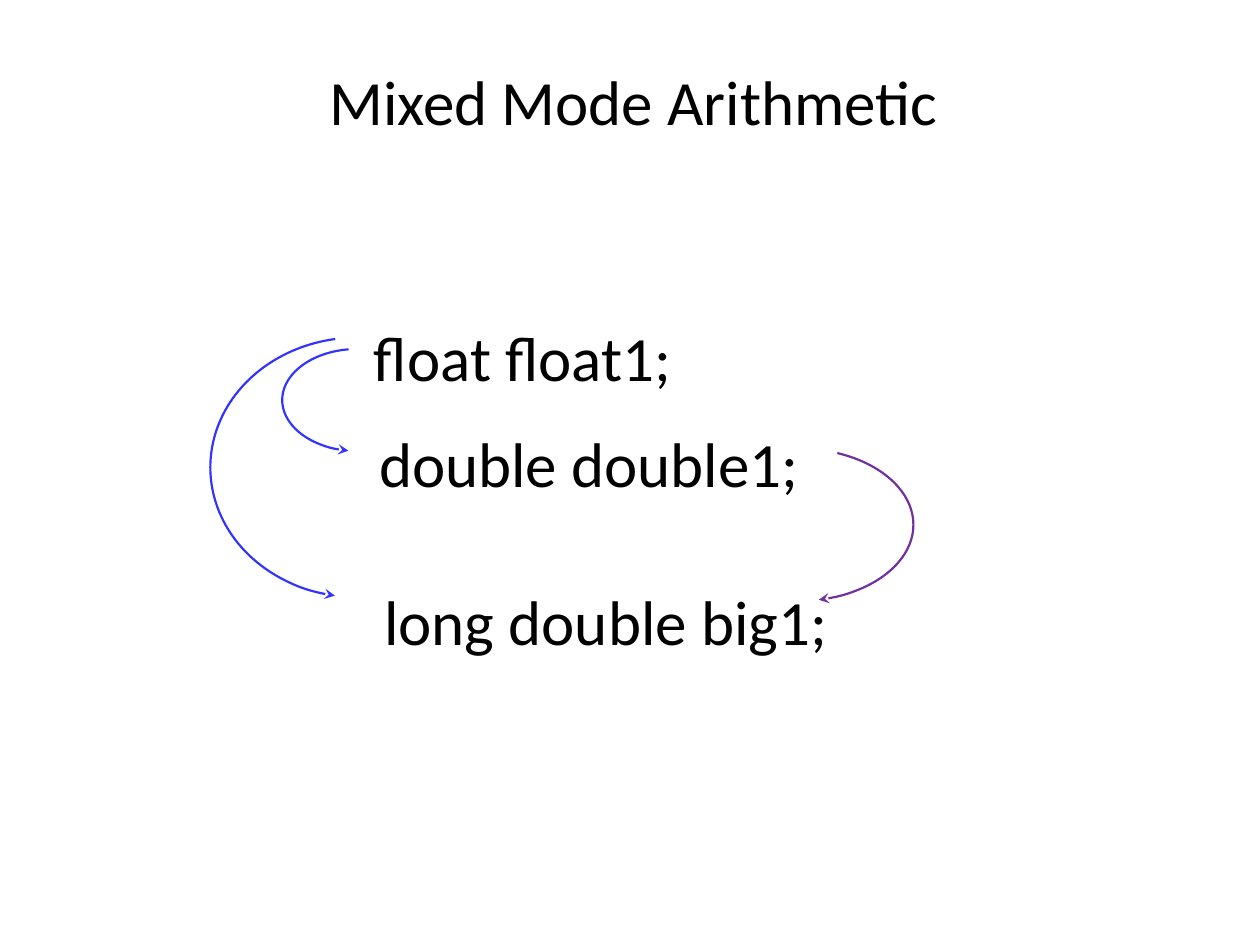
from lxml import etree
from pptx import Presentation
from pptx.dml.color import RGBColor
from pptx.enum.shapes import MSO_SHAPE
from pptx.enum.text import MSO_ANCHOR, PP_ALIGN
from pptx.oxml.ns import qn
from pptx.util import Inches, Pt

ARC = MSO_SHAPE.ARC
LEFT, CENTER = PP_ALIGN.LEFT, PP_ALIGN.CENTER
TOP, MIDDLE = MSO_ANCHOR.TOP, MSO_ANCHOR.MIDDLE

WIDTH, HEIGHT = 10, 7.5
FONT, FONT_SIZE = "Calibri", 36
COLORS = {"text": "000000", "from_float": "3333FF", "from_double": "7030A0"}

TITLE = ("Mixed Mode Arithmetic", (0.25, 0.3, 9.56, 0.99))
DECLARATIONS = [
    ("float float1;", (2.87, 2.48, 3.97, 0.69)),
    ("double double1;", (2.91, 3.32, 4.12, 0.69)),
    ("long double big1;", (2.95, 4.57, 4.15, 0.69)),
]

# Start and end angles in degrees, clockwise from the right
LEFT_SWEEP = (99.83, 260.33)
RIGHT_SWEEP = (298.66, 74.59)
PROMOTIONS = [
    # box, sweep, arrow end, color
    ((2.24, 2.77, 1.19, 0.81), LEFT_SWEEP, "headEnd", "from_float"),
    ((1.67, 2.68, 2.33, 2.06), LEFT_SWEEP, "headEnd", "from_float"),
    ((5.42, 3.56, 1.83, 1.21), RIGHT_SWEEP, "tailEnd", "from_double"),
]


def color(name):
    return RGBColor.from_string(COLORS[name])


def add_text(slide, text, box, alignment=LEFT, anchor=TOP):
    frame = slide.shapes.add_textbox(*map(Inches, box)).text_frame
    frame.word_wrap = True
    frame.vertical_anchor = anchor
    paragraph = frame.paragraphs[0]
    paragraph.alignment = alignment
    run = paragraph.add_run()
    run.text = text
    run.font.name = FONT
    run.font.size = Pt(FONT_SIZE)
    run.font.color.rgb = color("text")


def add_curved_arrow(slide, box, sweep, arrow_end, color_name):
    shape = slide.shapes.add_shape(ARC, *map(Inches, box))
    for index, degrees in enumerate(sweep):
        # Angles are stored as 1/60000 degree, adjustments as 1/100000
        shape.adjustments[index] = degrees * 0.6
    shape.shadow.inherit = False
    shape.fill.background()
    shape.line.color.rgb = color(color_name)
    shape.line.width = Pt(1.25)
    line = shape.line._get_or_add_ln()
    etree.SubElement(line, qn(f"a:{arrow_end}"), type="stealth")


def main():
    presentation = Presentation()
    presentation.slide_width = Inches(WIDTH)
    presentation.slide_height = Inches(HEIGHT)
    slide = presentation.slides.add_slide(presentation.slide_layouts[6])

    add_text(slide, *TITLE, CENTER, MIDDLE)
    for text, box in DECLARATIONS:
        add_text(slide, text, box)
    for promotion in PROMOTIONS:
        add_curved_arrow(slide, *promotion)

    presentation.save("out.pptx")


if __name__ == "__main__":
    main()
